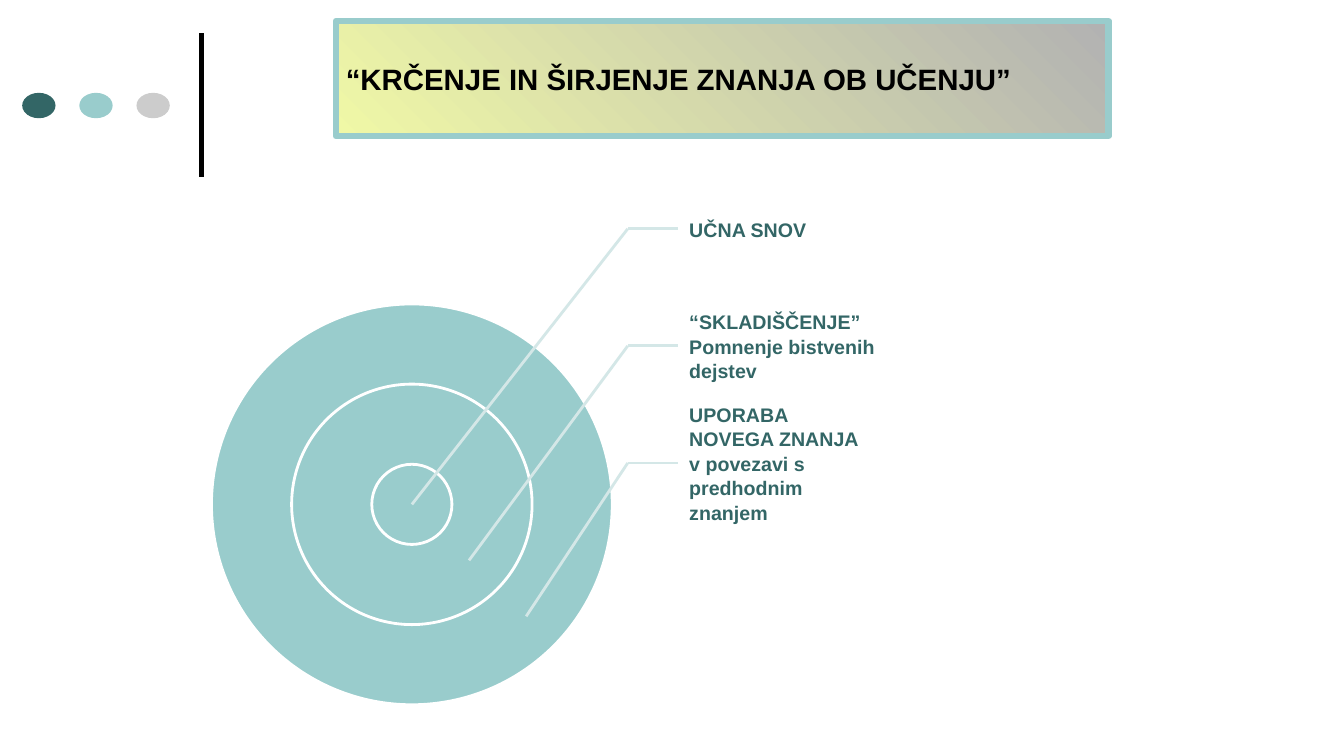
from lxml import etree
from pptx import Presentation
from pptx.dml.color import RGBColor
from pptx.enum.shapes import MSO_CONNECTOR, MSO_SHAPE
from pptx.enum.text import MSO_ANCHOR, MSO_AUTO_SIZE, PP_ALIGN
from pptx.oxml.ns import qn
from pptx.util import Cm, Pt

ELLIPSE = MSO_SHAPE.OVAL
STRAIGHT = MSO_CONNECTOR.STRAIGHT
MIDDLE = MSO_ANCHOR.MIDDLE
LEFT = PP_ALIGN.LEFT
NO_AUTOFIT = MSO_AUTO_SIZE.NONE
TITLE_ONLY = 5

FONT = "Arial"
BLACK, WHITE, GREY = "000000", "FFFFFF", "CCCCCC"
DARK_TEAL, TEAL, PALE_TEAL = "336666", "99CCCC", "D4E7E7"
YELLOW, TITLE_GREY = "F0F8A6", "B2B2B2"

TITLE = "“KRČENJE IN ŠIRJENJE ZNANJA OB UČENJU”"
LABELS = [
    ["UČNA SNOV"],
    ["“SKLADIŠČENJE”", "Pomnenje bistvenih dejstev"],
    ["UPORABA NOVEGA ZNANJA", "v povezavi s predhodnim", "znanjem"],
]


def color(hex_string):
    return RGBColor.from_string(hex_string)


class SlideBuilder:
    """Draws elements, measured in centimetres, on one slide."""

    def __init__(self, slide):
        self.slide = slide

    def style_paragraph(self, paragraph, size, text_color):
        paragraph.alignment = LEFT
        font = paragraph.font
        font.name, font.size, font.bold = FONT, Pt(size), True
        font.color.rgb = color(text_color)

    def title(self, text, left, top, width, height):
        title = self.slide.shapes.title
        title.left, title.top = Cm(left), Cm(top)
        title.width, title.height = Cm(width), Cm(height)
        title.fill.gradient()
        title.fill.gradient_angle = 45
        for stop, stop_color in zip(title.fill.gradient_stops, (YELLOW, TITLE_GREY)):
            stop.color.rgb = color(stop_color)
        title.line.color.rgb = color(TEAL)
        title.line.width = Pt(4.5)
        frame = title.text_frame
        frame.text = text
        frame.auto_size = NO_AUTOFIT
        frame.word_wrap = True
        frame.vertical_anchor = MIDDLE
        self.style_paragraph(frame.paragraphs[0], 21, BLACK)

    def ellipse(self, left, top, width, height, fill, outline=None):
        shape = self.slide.shapes.add_shape(
            ELLIPSE, Cm(left), Cm(top), Cm(width), Cm(height))
        shape.shadow.inherit = False
        shape.fill.solid()
        shape.fill.fore_color.rgb = color(fill)
        if outline:
            shape.line.color.rgb = color(outline)
            shape.line.width = Pt(2)
        else:
            shape.line.fill.background()

    def line(self, start, end, line_color, width):
        connector = self.slide.shapes.add_connector(
            STRAIGHT, *(Cm(value) for value in (*start, *end)))
        connector.line.color.rgb = color(line_color)
        connector.line.width = Pt(width)
        etree.SubElement(connector._element.spPr, qn("a:effectLst"))

    def label(self, lines, left, top, width, height):
        box = self.slide.shapes.add_textbox(Cm(left), Cm(top), Cm(width), Cm(height))
        frame = box.text_frame
        frame.word_wrap = True
        frame.vertical_anchor = MIDDLE
        frame.margin_left = Cm(0.28)
        frame.margin_top = frame.margin_right = frame.margin_bottom = Cm(0.05)
        frame.text = "\n".join(lines)
        for paragraph in frame.paragraphs:
            paragraph.line_spacing = 1.04
            self.style_paragraph(paragraph, 14, DARK_TEAL)


def main():
    presentation = Presentation()
    presentation.slide_width, presentation.slide_height = Cm(33.87), Cm(19.05)
    layout = presentation.slide_layouts[TITLE_ONLY]
    builder = SlideBuilder(presentation.slides.add_slide(layout))

    builder.line((5.08, 4.45), (5.08, 0.84), BLACK, 3)
    for index, dot_color in enumerate((DARK_TEAL, TEAL, GREY)):
        builder.ellipse(0.56 + 1.44 * index, 2.34, 0.84, 0.64, dot_color)
    builder.title(TITLE, 8.46, 0.53, 19.48, 2.9)

    center_x, center_y, radius_step = 10.38, 12.71, 1.01
    for steps in (5, 3, 1):
        radius = steps * radius_step
        builder.ellipse(center_x - radius, center_y - radius,
                        2 * radius, 2 * radius, TEAL, WHITE)

    elbow_x, label_x, label_top, label_height = 15.82, 17.09, 4.29, 2.95
    for index, lines in enumerate(LABELS):
        top = label_top + index * label_height
        elbow = (elbow_x, top + label_height / 2)
        target = (center_x + 1.44 * index, center_y + 1.41 * index)
        builder.label(lines, label_x, top, 5.03, label_height)
        builder.line(elbow, (label_x, elbow[1]), PALE_TEAL, 2)
        builder.line(elbow, target, PALE_TEAL, 2)

    presentation.save("out.pptx")


if __name__ == "__main__":
    main()
